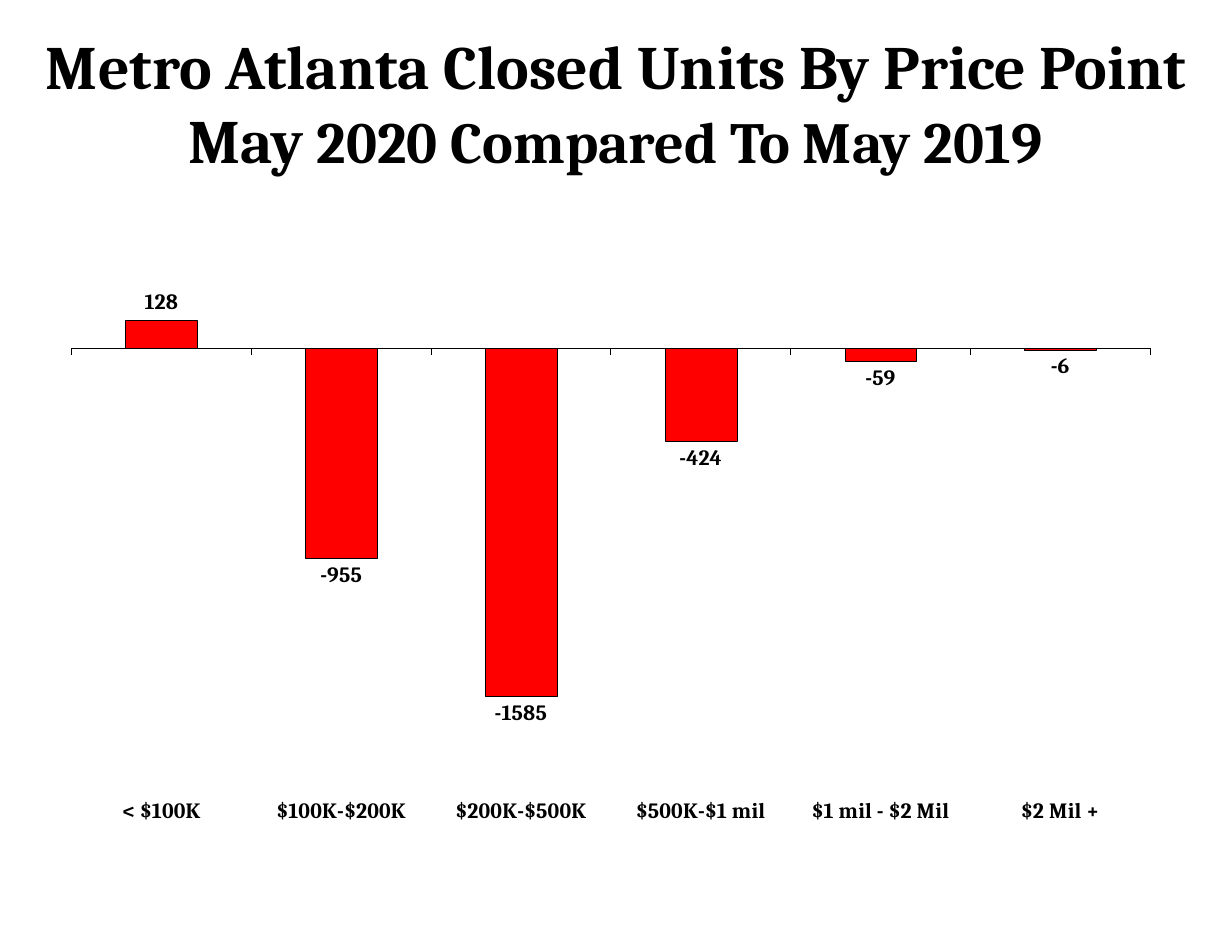
from lxml.etree import SubElement
from pptx import Presentation
from pptx.chart.data import CategoryChartData
from pptx.dml.color import RGBColor
from pptx.enum.chart import (XL_CHART_TYPE, XL_LABEL_POSITION,
                             XL_TICK_LABEL_POSITION, XL_TICK_MARK)
from pptx.enum.text import MSO_ANCHOR, PP_ALIGN
from pptx.oxml.ns import qn
from pptx.util import Pt

FONT = "Cambria"
COLORS = {"ink": "000000", "bar": "FF0000", "paper": "FFFFFF"}
CLOSED_UNITS = {
    "< $100K": 128,
    "$100K-$200K": -955,
    "$200K-$500K": -1585,
    "$500K-$1 mil": -424,
    "$1 mil - $2 Mil": -59,
    "$2 Mil +": -6,
}


def rgb(name):
    return RGBColor.from_string(COLORS[name])


def style_font(font, size):
    font.name = FONT
    font.size = Pt(size)
    font.bold = True
    font.color.rgb = rgb("ink")


def add_title(s, x, y, w, h):
    tf = s.shapes.add_textbox(Pt(x), Pt(y), Pt(w), Pt(h)).text_frame
    tf.word_wrap = True
    tf.vertical_anchor = MSO_ANCHOR.MIDDLE
    p = tf.paragraphs[0]
    p.alignment = PP_ALIGN.CENTER
    p.text = "Metro Atlanta Closed Units By Price Point\vMay "
    p.add_run().text = "2020 Compared To May 2019"
    for r, size in zip(p.runs, (39.6, 39.6, 37.4)):
        style_font(r.font, size)


def set_inner_plot(chart, x, y, w, h):
    """Place the plot area by fractions of the chart frame."""
    plot_area = chart._chartSpace.chart.plotArea
    layout = plot_area.find(qn("c:layout"))
    if layout is None:
        layout = SubElement(plot_area, qn("c:layout"))
        plot_area.insert(0, layout)
    manual = SubElement(layout, qn("c:manualLayout"))
    settings = {"layoutTarget": "inner", "xMode": "edge", "yMode": "edge",
                "x": x, "y": y, "w": w, "h": h}
    for tag, value in settings.items():
        SubElement(manual, qn(f"c:{tag}")).set("val", str(value))


def add_units_chart(s, x, y, w, h):
    data = CategoryChartData(number_format="0")
    data.categories = list(CLOSED_UNITS)
    data.add_series("Series 1", list(CLOSED_UNITS.values()))
    chart = s.shapes.add_chart(XL_CHART_TYPE.COLUMN_CLUSTERED,
                               Pt(x), Pt(y), Pt(w), Pt(h), data).chart
    chart.has_legend = False
    chart.has_title = False
    style_font(chart.font, 14)
    set_inner_plot(chart, 0, 0.21, 0.88, 0.71)

    values = chart.value_axis
    values.minimum_scale, values.maximum_scale = -2000, 500
    values.has_major_gridlines = False
    values.visible = False

    prices = chart.category_axis
    prices.tick_label_position = XL_TICK_LABEL_POSITION.LOW
    prices.major_tick_mark = XL_TICK_MARK.OUTSIDE
    prices.format.line.color.rgb = rgb("ink")
    prices.format.line.width = Pt(0.01)

    plot = chart.plots[0]
    plot.gap_width = 150
    plot.vary_by_categories = False
    bars = plot.series[0]
    bars.invert_if_negative = False
    bars.format.fill.solid()
    bars.format.fill.fore_color.rgb = rgb("bar")
    bars.format.line.color.rgb = rgb("ink")
    bars.format.line.width = Pt(0.06)

    labels = bars.data_labels
    labels.show_value = True
    labels.number_format = "0"
    labels.number_format_is_linked = False
    labels.position = XL_LABEL_POSITION.OUTSIDE_END
    style_font(labels.font, 14)


def main():
    prs = Presentation()
    prs.slide_width, prs.slide_height = Pt(792), Pt(612)
    s = prs.slides.add_slide(prs.slide_layouts[6])
    s.background.fill.solid()
    s.background.fill.fore_color.rgb = rgb("paper")
    add_title(s, 0, 49, 792, 33)
    add_units_chart(s, 46, 49, 788, 497)
    prs.save("out.pptx")


if __name__ == "__main__":
    main()
